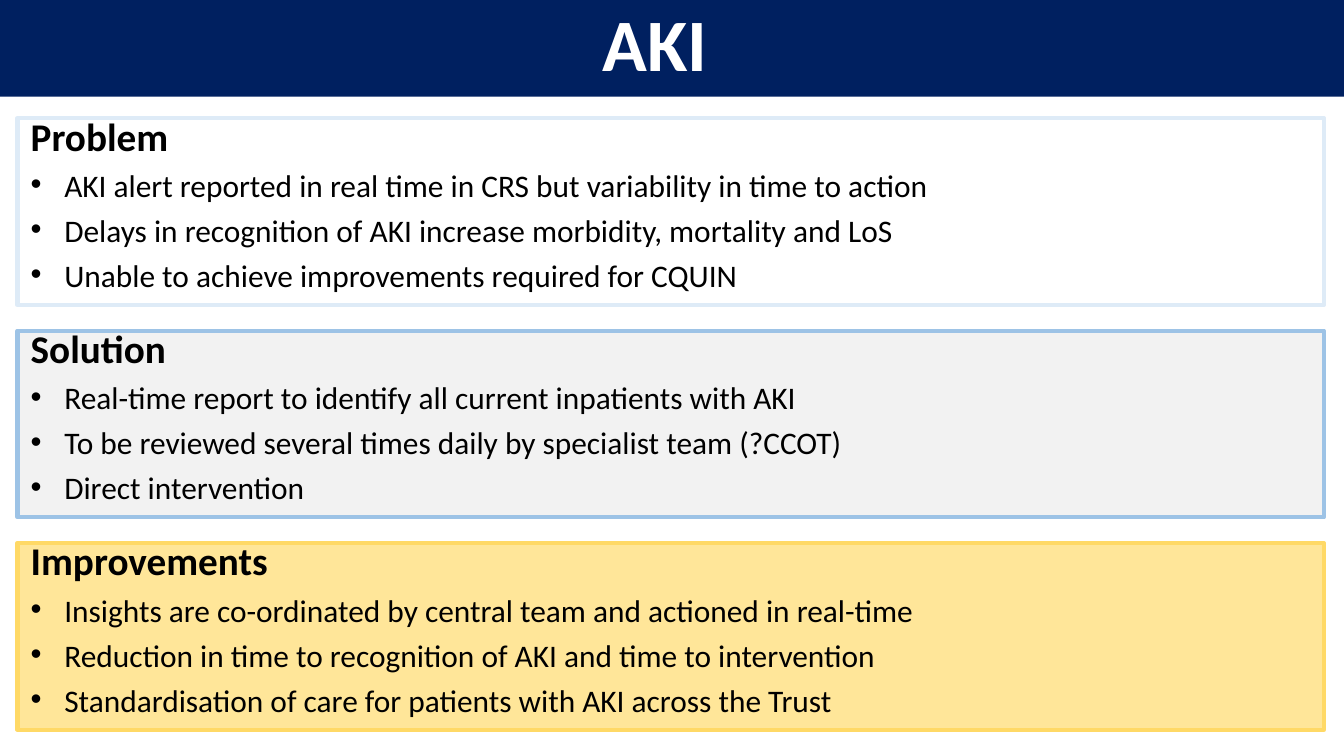
import pptx
import pptx.util
import pptx.dml.color
import pptx.enum.shapes
import pptx.enum.text
import pptx.oxml.ns
import lxml.etree
from pptx.util import Inches, Pt

COLOURS = {
    "navy": "002060", "white": "FFFFFF", "black": "000000",
    "pale blue": "DEEBF7", "grey": "F2F2F2", "blue": "9DC3E6",
    "pale gold": "FFE699", "gold": "FFD966",
}
FONT = "Calibri"
BULLET_FONT = "Arial"

PANELS = [
    ("Problem", "white", "pale blue", [
        "AKI alert reported in real time in CRS but variability in time to action",
        "Delays in recognition of AKI increase morbidity, mortality and LoS",
        "Unable to achieve improvements required for CQUIN",
    ]),
    ("Solution", "grey", "blue", [
        "Real-time report to identify all current inpatients with AKI",
        "To be reviewed several times daily by specialist team (?CCOT)",
        "Direct intervention",
    ]),
    ("Improvements", "pale gold", "gold", [
        "Insights are co-ordinated by central team and actioned in real-time",
        "Reduction in time to recognition of AKI and time to intervention",
        "Standardisation of care for patients with AKI across the Trust",
    ]),
]


def rgb(name):
    return pptx.dml.color.RGBColor.from_string(COLOURS[name])


def paint(shape, colour):
    shape.fill.solid()
    shape.fill.fore_color.rgb = rgb(colour)


def style(paragraph, size, colour, bold):
    font = paragraph.font
    font.name, font.size, font.bold = FONT, Pt(size), bold
    font.color.rgb = rgb(colour)


def add_bullet(paragraph, indent):
    properties = paragraph._p.get_or_add_pPr()
    properties.set("marL", str(indent))
    properties.set("indent", str(-indent))
    # The bullet must precede the default run properties
    run_defaults = properties.find(pptx.oxml.ns.qn("a:defRPr"))
    for tag, key, value in (("a:buFont", "typeface", BULLET_FONT),
                            ("a:buChar", "char", "•")):
        part = lxml.etree.Element(pptx.oxml.ns.qn(tag))
        part.set(key, value)
        run_defaults.addprevious(part)


def title_banner(slide, left, top, width, height):
    banner = slide.shapes.title
    banner.left, banner.top = Inches(left), Inches(top)
    banner.width, banner.height = Inches(width), Inches(height)
    paint(banner, "navy")
    frame = banner.text_frame
    frame.text = "AKI"
    frame.auto_size = pptx.enum.text.MSO_AUTO_SIZE.NONE
    frame.vertical_anchor = pptx.enum.text.MSO_ANCHOR.MIDDLE
    # A wider right margin sets the title slightly left of centre
    frame.margin_right = Inches(0.35)
    heading = frame.paragraphs[0]
    heading.alignment = pptx.enum.text.PP_ALIGN.CENTER
    heading.line_spacing = 0.9
    style(heading, 39.6, "white", True)


def panel(slide, left, top, width, height, heading, fill, border, points):
    box = slide.shapes.add_shape(
        pptx.enum.shapes.MSO_SHAPE.RECTANGLE,
        Inches(left), Inches(top), Inches(width), Inches(height))
    box.shadow.inherit = False
    paint(box, fill)
    box.line.color.rgb = rgb(border)
    box.line.width = Pt(2.25)
    frame = box.text_frame
    frame.word_wrap = True
    frame.vertical_anchor = pptx.enum.text.MSO_ANCHOR.TOP
    for index, text in enumerate([heading] + points):
        paragraph = frame.add_paragraph() if index else frame.paragraphs[0]
        paragraph.text = text
        paragraph.alignment = pptx.enum.text.PP_ALIGN.LEFT
        paragraph.line_spacing = 0.7
        paragraph.space_before = Pt(10)
        style(paragraph, 16.8 if index else 21, "black", index == 0)
        if index:
            add_bullet(paragraph, Inches(0.25))


def main():
    presentation = pptx.Presentation()
    # Widescreen, 16:9
    presentation.slide_width = Inches(10)
    presentation.slide_height = Inches(10 * 9 / 16)
    slide = presentation.slides.add_slide(presentation.slide_layouts[5])

    # Title banner
    title_banner(slide, 0, -0.01, 10, 0.73)

    # Equal panels stacked down the slide
    first_top, pitch = 0.88, 1.58
    for row, content in enumerate(PANELS):
        panel(slide, 0.13, first_top + row * pitch, 9.72, 1.39, *content)

    presentation.save("out.pptx")


if __name__ == "__main__":
    main()
